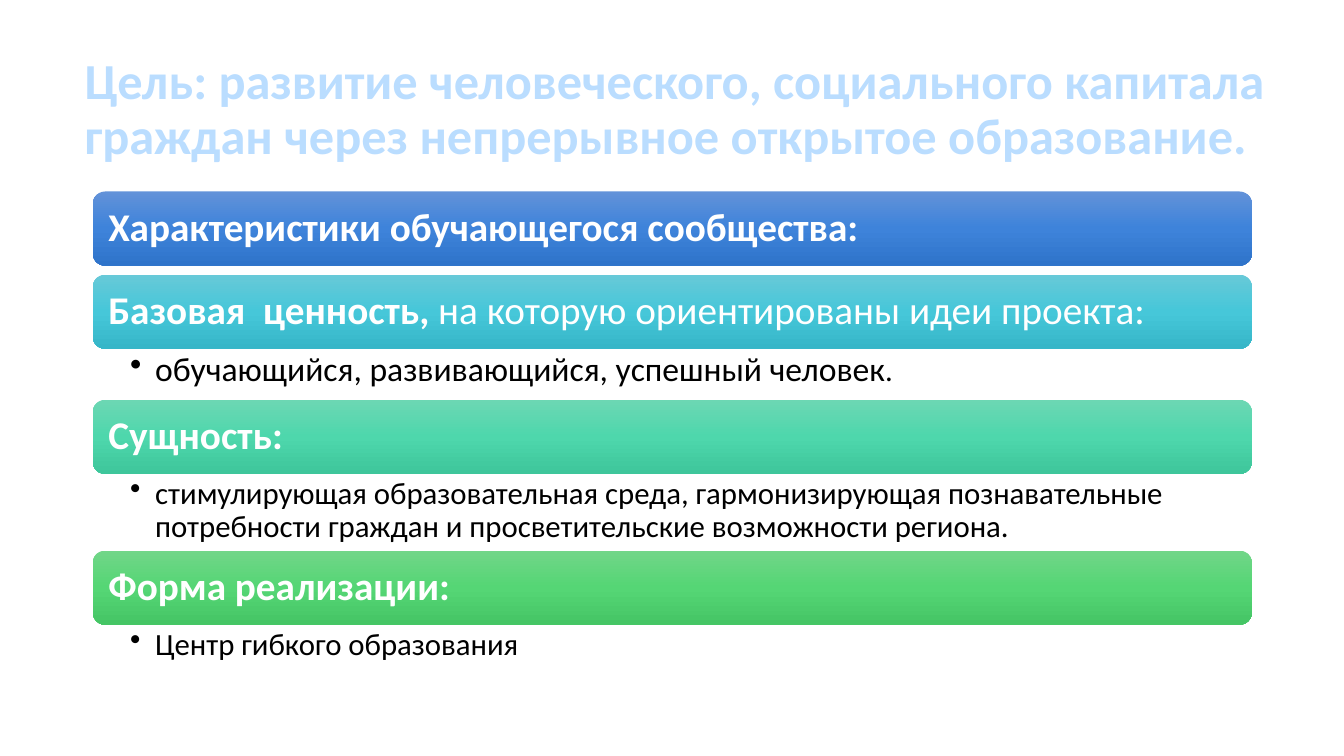
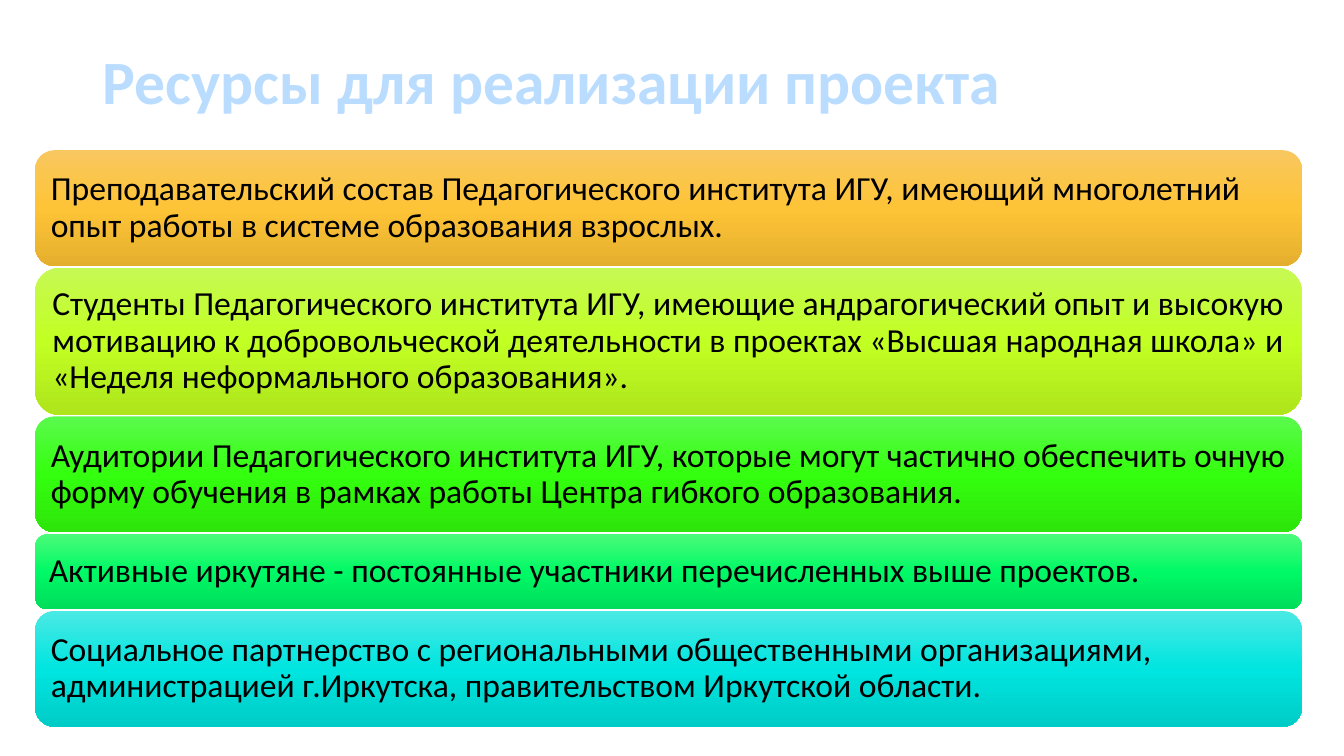
from collections import namedtuple
from copy import deepcopy

from lxml.etree import SubElement
from pptx import Presentation
from pptx.dml.color import RGBColor
from pptx.enum.shapes import MSO_SHAPE as Preset
from pptx.enum.text import MSO_ANCHOR as Anchor
from pptx.oxml.ns import qn
from pptx.util import Inches, Pt

Box = namedtuple("Box", "left top width height")

WIDTH, HEIGHT = Inches(13.33), Inches(7.5)
COLORS = {"title": "BADDFF", "light": "FFFFFF", "dark": "000000"}
GRADIENTS = {
    "blue": ("6292D9", "3E83DA", "2F74CA"),
    "cyan": ("67C9D8", "46C7D9", "36B6C8"),
    "mint": ("6CD7B3", "4ED7AC", "3EC69B"),
    "leaf": ("71D688", "55D675", "45C565"),
    "amber": ("F8C75F", "FEC437", "E5AF2E"),
    "lime": ("C6F954", "C2FF22", "AEE51C"),
    "green": ("5BFA4D", "34FF0E", "2DE50A"),
    "emerald": ("4BFB79", "00F966", "00DD5B"),
    "aqua": ("4BE9E4", "00E5E0", "00CCC7"),
}
HEADING = {"size": 28, "bold": True, "color": "light"}
HEADING_PLAIN = HEADING | {"bold": False}
NOTE = {"size": 22, "color": "dark"}
NOTE_LARGE = NOTE | {"size": 24}
BAND_HEIGHT, BAND_GAP = 9.8, 1.2
BAND_HEIGHTS = {1: 10, 2: 15.33, 3: 19.47}

GOAL = "Цель: развитие человеческого, социального капитала граждан через непрерывное открытое образование."
FEATURES = [
    ("blue", [("Характеристики обучающегося сообщества:", HEADING)], None, 0),
    ("cyan", [("Базовая  ценность,", HEADING),
              (" на которую ориентированы идеи проекта:", HEADING_PLAIN)],
     [("обучающийся, развивающийся, успешный человек", NOTE_LARGE), (".", NOTE)], 6.75),
    ("mint", [("Сущность:", HEADING)],
     [("стимулирующая образовательная среда, гармонизирующая познавательные "
       "потребности граждан и просветительские возможности региона.", NOTE)], 10.15),
    ("leaf", [("Форма реализации:", HEADING)], [("Центр гибкого образования", NOTE)], 6.75),
]
RESOURCES = [
    ("amber", 2, "Преподавательский состав Педагогического института ИГУ, имеющий многолетний "
                 "опыт работы в системе образования взрослых."),
    ("lime", 3, "Студенты Педагогического института ИГУ, имеющие андрагогический опыт и высокую "
                "мотивацию к добровольческой деятельности в проектах «Высшая народная школа» и "
                "«Неделя неформального образования»."),
    ("green", 2, "Аудитории Педагогического института ИГУ, которые могут частично обеспечить "
                 "очную форму обучения в рамках работы Центра гибкого образования."),
    ("emerald", 1, "Активные иркутяне - постоянные участники перечисленных выше проектов."),
    ("aqua", 2, "Социальное партнерство с региональными общественными организациями, "
                "администрацией г.Иркутска, правительством Иркутской области."),
]


def place(box):
    """Turn a box in percent of the slide into lengths."""
    return [round(share * side / 100) for share, side in zip(box, (WIDTH, HEIGHT) * 2)]


def write(shape, spans, insets, anchor=Anchor.MIDDLE, bullet=False):
    """Write one paragraph of formatted spans into a shape."""
    frame = shape.text_frame
    frame.word_wrap, frame.vertical_anchor = True, anchor
    for side, inset in zip(("left", "top", "right", "bottom"), insets):
        setattr(frame, f"margin_{side}", Inches(inset))
    para = frame.paragraphs[0]
    para.line_spacing = 0.9
    props = para._p.get_or_add_pPr()
    props.set("algn", "l")
    if bullet:
        props.set("marL", str(Inches(0.25)))
        props.set("indent", str(-Inches(0.25)))
        SubElement(props, qn("a:buChar"), char="•")
    for text, style in spans:
        span = para.add_run()
        span.text = text
        values = {"name": "Calibri", "size": Pt(style["size"]), "bold": style.get("bold", False)}
        for name, value in values.items():
            setattr(span.font, name, value)
        span.font.color.rgb = RGBColor.from_string(COLORS[style["color"]])


def add_title(page, box, text, size):
    """Add the slide title."""
    title = page.shapes.add_textbox(*place(box))
    write(title, [(text, {"size": size, "bold": True, "color": "title"})], (0.1, 0.05, 0.1, 0.05))


def add_band(page, box, gradient, spans, inset):
    """Add a rounded band with a vertical gradient and text."""
    band = page.shapes.add_shape(Preset.ROUNDED_RECTANGLE, *place(box))
    band.shadow.inherit = False
    band.line.fill.background()
    band.fill.gradient()
    band.fill.gradient_angle = 270
    stop_list = band._element.spPr.find(".//" + qn("a:gsLst"))
    stop_list.append(deepcopy(stop_list[0]))
    for stop, position, color in zip(band.fill.gradient_stops, (0, 0.5, 1), GRADIENTS[gradient]):
        stop.position = position
        stop.color.rgb = RGBColor.from_string(color)
    write(band, spans, [inset] * 4)


def add_features(page, box):
    """Stack headed bands, each with an optional bullet below."""
    top = box.top
    for gradient, heading, note, note_height in FEATURES:
        add_band(page, box._replace(top=top, height=BAND_HEIGHT), gradient, heading, 0.12)
        top += BAND_HEIGHT
        if note:
            area = page.shapes.add_textbox(*place(box._replace(top=top, height=note_height)))
            write(area, note, (0.37, 0.04, 0.22, 0.04), Anchor.TOP, bullet=True)
        top += note_height or BAND_GAP


def add_resources(page, box):
    """Fill the box with bands sized by line count and equal gaps."""
    used = sum(BAND_HEIGHTS[lines] for _, lines, _ in RESOURCES)
    gap = (box.height - used) / (len(RESOURCES) - 1)
    top = box.top
    for gradient, lines, text in RESOURCES:
        height = BAND_HEIGHTS[lines]
        add_band(page, box._replace(top=top, height=height), gradient, [(text, NOTE_LARGE)], 0.1)
        top += height + gap


def main():
    """Build and save the deck."""
    deck = Presentation()
    deck.slide_width, deck.slide_height = WIDTH, HEIGHT
    goal, resources = (deck.slides.add_slide(deck.slide_layouts[6]) for _ in range(2))
    add_title(goal, Box(5.55, 5.33, 94.45, 18.67), GOAL, 36)
    add_features(goal, Box(6.9, 25.33, 86.25, 64))
    add_title(resources, Box(6.9, 5.33, 86.25, 11.6), "Ресурсы для реализации проекта", 44)
    add_resources(resources, Box(2.62, 19.87, 94.25, 76.27))
    deck.save("out.pptx")


if __name__ == "__main__":
    main()
